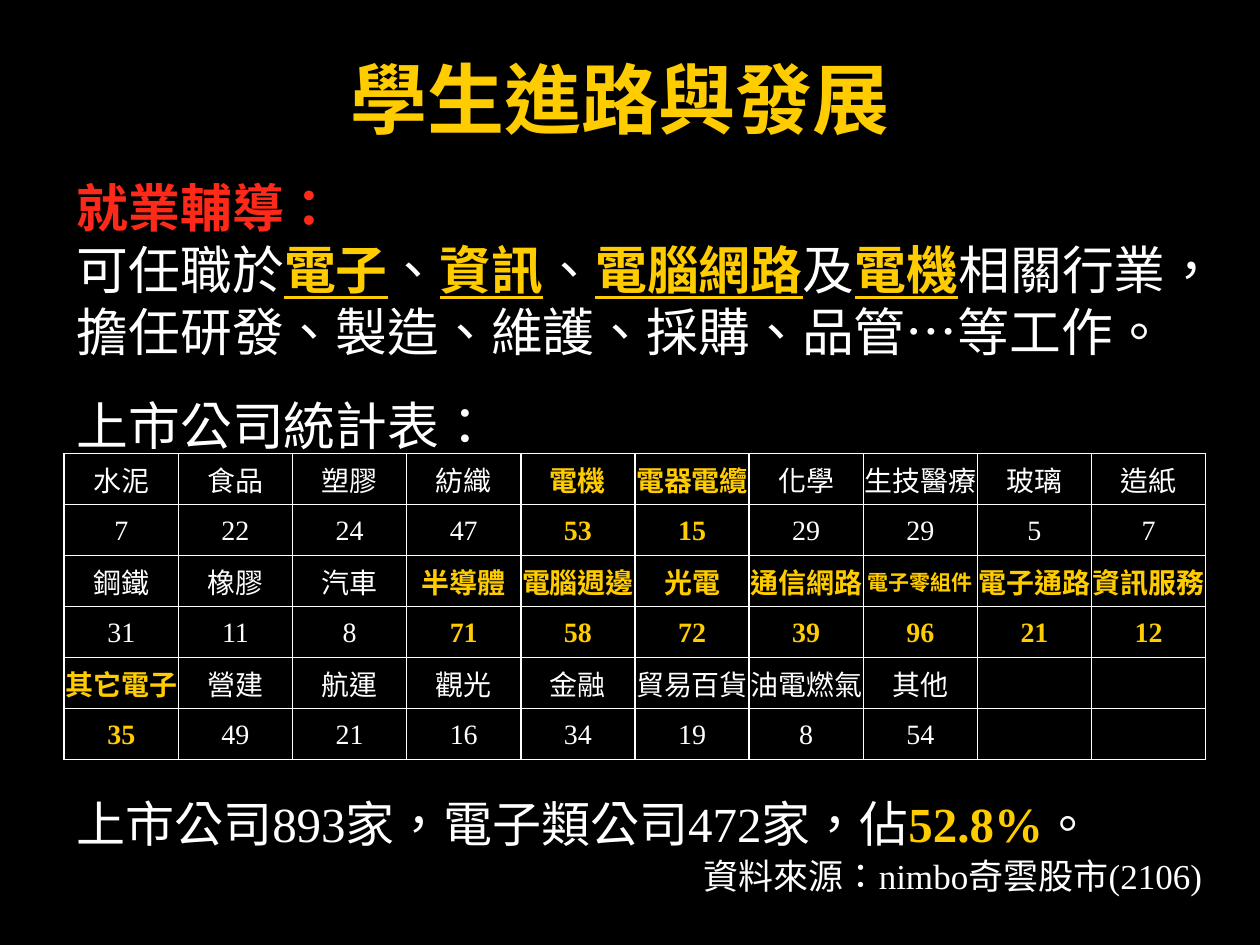
"""Build the slide on student careers with the table of listed companies."""
from lxml import etree
from pptx import Presentation
from pptx.dml.color import RGBColor
from pptx.enum.lang import MSO_LANGUAGE_ID
from pptx.enum.text import MSO_ANCHOR, PP_ALIGN
from pptx.oxml.ns import qn
from pptx.util import Inches, Pt

LEFT, CENTER, RIGHT = PP_ALIGN.LEFT, PP_ALIGN.CENTER, PP_ALIGN.RIGHT
TOP, MIDDLE = MSO_ANCHOR.TOP, MSO_ANCHOR.MIDDLE
TAIWAN = MSO_LANGUAGE_ID.TRADITIONAL_CHINESE
SANS, SERIF, TITLE_FONT = "Noto Sans CJK SC", "Times New Roman", "Arial"
BLACK, WHITE, YELLOW, RED = "000000", "FFFFFF", "FFCC00", "FD2919"

TITLE = "學生進路與發展"
HEADING = "就業輔導："
CAREERS = [
    ("可任職於", WHITE), ("電子", YELLOW), ("、", WHITE), ("資訊", YELLOW), ("、", WHITE),
    ("電腦網路", YELLOW), ("及", WHITE), ("電機", YELLOW),
    ("相關行業，擔任研發、製造、維護、採購、品管…等工作。", WHITE),
]
TABLE_HEADING = "上市公司統計表："
SECTORS = [
    ("水泥", 7), ("食品", 22), ("塑膠", 24), ("紡織", 47), ("電機", 53),
    ("電器電纜", 15), ("化學", 29), ("生技醫療", 29), ("玻璃", 5), ("造紙", 7),
    ("鋼鐵", 31), ("橡膠", 11), ("汽車", 8), ("半導體", 71), ("電腦週邊", 58),
    ("光電", 72), ("通信網路", 39), ("電子零組件", 96), ("電子通路", 21), ("資訊服務", 12),
    ("其它電子", 35), ("營建", 49), ("航運", 21), ("觀光", 16), ("金融", 34),
    ("貿易百貨", 19), ("油電燃氣", 8), ("其他", 54),
]
ELECTRONIC = {"電機", "電器電纜", "半導體", "電腦週邊", "光電", "通信網路",
              "電子零組件", "電子通路", "資訊服務", "其它電子"}
SUMMARY = [("上市公司893家，電子類公司472家，佔", WHITE), ("52.8%", YELLOW), ("。", WHITE)]
SOURCE = "資料來源：nimbo奇雲股市(2106)"
COLUMNS, ROWS = 10, 6


def rgb(color):
    return RGBColor.from_string(color)


def write(paragraph, parts, size, face, align=LEFT, line=None, before=0, underline=False):
    paragraph.alignment = align
    paragraph.space_before = Pt(before)
    if line:
        paragraph.line_spacing = Pt(line)
    font = paragraph.font
    font.size, font.name, font.language_id = Pt(size), face, TAIWAN
    etree.SubElement(font._rPr, qn("a:ea"), typeface=SANS)
    for text, color in parts:
        run = paragraph.add_run()
        run.text = text
        run.font.language_id = TAIWAN
        run.font.color.rgb = rgb(color)
        run.font.bold = color != WHITE
        if underline and color == YELLOW:
            run.font.underline = True


def add_text(slide, left, top, width, height, anchor=TOP):
    frame = slide.shapes.add_textbox(*map(Inches, (left, top, width, height))).text_frame
    frame.word_wrap = True
    frame.vertical_anchor = anchor
    return frame


def style_cell(cell):
    cell.fill.solid()
    cell.fill.fore_color.rgb = rgb(BLACK)
    cell.vertical_anchor = MIDDLE
    cell.margin_left = cell.margin_right = cell.margin_bottom = 0
    cell.margin_top = Inches(0.01)
    properties = cell._tc.get_or_add_tcPr()
    for index, side in enumerate(("lnL", "lnR", "lnT", "lnB")):
        border = etree.Element(qn(f"a:{side}"), w=str(Pt(1)))
        fill = etree.SubElement(border, qn("a:solidFill"))
        etree.SubElement(fill, qn("a:srgbClr"), val=WHITE)
        properties.insert(index, border)


def add_sectors(slide):
    box = map(Inches, (0.51, 3.6, 9.06, 2.43))
    table = slide.shapes.add_table(ROWS, COLUMNS, *box).table
    table.first_row = table.horz_banding = False
    for cell in table.iter_cells():
        style_cell(cell)
    for index, (sector, count) in enumerate(SECTORS):
        band, column = divmod(index, COLUMNS)
        color = YELLOW if sector in ELECTRONIC else WHITE
        for offset, text in enumerate((sector, str(count))):
            size = 12 if len(text) > 4 else 16
            paragraph = table.cell(2 * band + offset, column).text_frame.paragraphs[0]
            write(paragraph, [(text, color)], size, SERIF, CENTER)


def main():
    deck = Presentation()
    deck.slide_width, deck.slide_height = Inches(10), Inches(7.5)
    slide = deck.slides.add_slide(deck.slide_layouts[6])
    slide.background.fill.solid()
    slide.background.fill.fore_color.rgb = rgb(BLACK)

    guidance = add_text(slide, 0.51, 1.3, 9.13, 2.29)
    guidance.margin_top, guidance.margin_right = Inches(0.1), 0
    write(guidance.paragraphs[0], [(HEADING, RED)], 29.6, SANS, line=35.4)
    write(guidance.add_paragraph(), CAREERS, 29.6, SANS, line=35.4, underline=True)
    write(guidance.add_paragraph(), [(TABLE_HEADING, WHITE)], 29.6, SANS, line=35.4, before=18)

    title = add_text(slide, 0.51, 0.21, 8.82, 1.13, MIDDLE)
    write(title.paragraphs[0], [(TITLE, YELLOW)], 44, TITLE_FONT, CENTER)

    add_sectors(slide)

    totals = add_text(slide, 0.51, 6.19, 9.13, 1.02)
    write(totals.paragraphs[0], SUMMARY, 28, SERIF, line=38)
    write(totals.add_paragraph(), [(SOURCE, WHITE)], 20, SERIF, RIGHT, line=25)

    deck.save("out.pptx")


if __name__ == "__main__":
    main()
